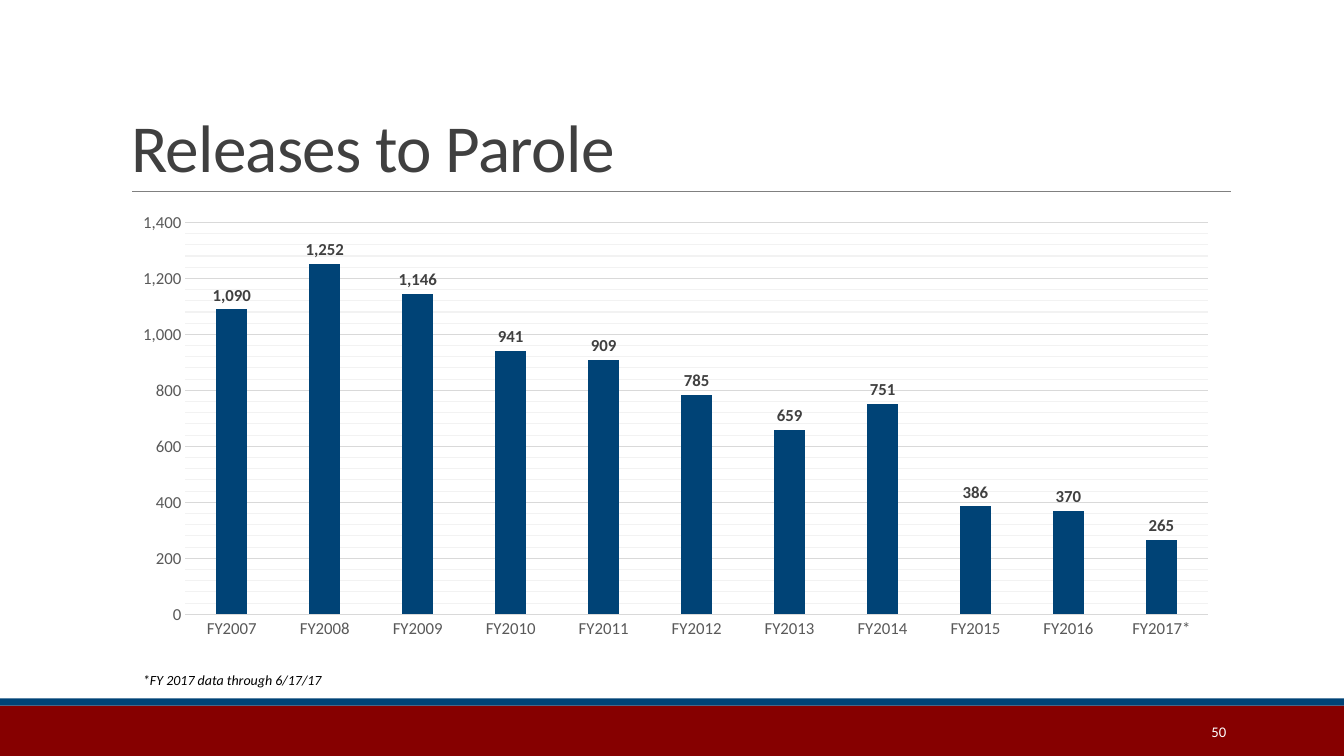
from copy import deepcopy

from pptx import Presentation
from pptx.chart.data import CategoryChartData
from pptx.dml.color import RGBColor
from pptx.enum.chart import XL_CHART_TYPE, XL_LABEL_POSITION, XL_TICK_MARK
from pptx.enum.shapes import MSO_CONNECTOR, MSO_SHAPE
from pptx.enum.text import MSO_ANCHOR, PP_ALIGN
from pptx.oxml.ns import qn
from pptx.util import Inches, Pt
from lxml import etree

COLUMN = XL_CHART_TYPE.COLUMN_CLUSTERED
OUTSIDE = XL_LABEL_POSITION.OUTSIDE_END
NO_TICK = XL_TICK_MARK.NONE
STRAIGHT = MSO_CONNECTOR.STRAIGHT
RECT = MSO_SHAPE.RECTANGLE
BOTTOM, MIDDLE, TOP = MSO_ANCHOR.BOTTOM, MSO_ANCHOR.MIDDLE, MSO_ANCHOR.TOP
LEFT, RIGHT = PP_ALIGN.LEFT, PP_ALIGN.RIGHT

RED = RGBColor(0x86, 0x00, 0x00)
BLUE = RGBColor(0x00, 0x43, 0x76)
DARK = RGBColor(0x40, 0x40, 0x40)
GRAY = RGBColor(0x59, 0x59, 0x59)
RULE = RGBColor(0x80, 0x80, 0x80)
GRID = RGBColor(0xD9, 0xD9, 0xD9)
PALE = RGBColor(0xF2, 0xF2, 0xF2)
BLACK = RGBColor(0, 0, 0)
WHITE = RGBColor(255, 255, 255)
FONT = "Calibri"
COUNTS = [1090, 1252, 1146, 941, 909, 785, 659, 751, 386, 370, 265]
YEARS = [f"FY{year}" for year in range(2007, 2017)] + ["FY2017*"]


def set_font(font, size, color, bold=False, italic=False):
    font.name = FONT
    font.size = Pt(size)
    font.color.rgb = color
    font.bold = bold
    font.italic = italic


def set_line(line, color, width=0.75):
    line.color.rgb = color
    line.width = Pt(width)


def add_band(slide, top, height, color):
    band = slide.shapes.add_shape(RECT, 0, Inches(top), Inches(13.33), Inches(height))
    band.shadow.inherit = False
    band.fill.solid()
    band.fill.fore_color.rgb = color
    band.line.fill.background()


def add_rule(slide, left, right, top):
    rule = slide.shapes.add_connector(
        STRAIGHT, Inches(left), Inches(top), Inches(right), Inches(top))
    set_line(rule.line, RULE, 0.5)
    etree.SubElement(rule._element.spPr, qn("a:effectLst"))


def set_title(slide, text):
    title = slide.shapes.title
    title.left, title.top = Inches(1.2), Inches(0.31)
    title.width, title.height = Inches(11), Inches(1.59)
    title.text = text
    title.text_frame.vertical_anchor = BOTTOM
    para = title.text_frame.paragraphs[0]
    para.alignment = LEFT
    para.line_spacing = 0.85
    set_font(para.font, 48, DARK)
    para.runs[0]._r.get_or_add_rPr().set("spc", "-50")


def add_text(slide, box, text, size, color, align=LEFT, anchor=TOP, italic=False):
    frame = slide.shapes.add_textbox(*map(Inches, box)).text_frame
    frame.word_wrap = True
    frame.vertical_anchor = anchor
    frame.text = text
    para = frame.paragraphs[0]
    para.alignment = align
    set_font(para.font, size, color, italic=italic)


def set_axis(axis):
    axis.major_tick_mark = NO_TICK
    axis.minor_tick_mark = NO_TICK
    set_font(axis.tick_labels.font, 12, GRAY)


def set_grid(axis):
    axis.has_major_gridlines = axis.has_minor_gridlines = True
    line = axis.major_gridlines.format.line
    set_line(line, PALE)
    major = axis._element.find(qn("c:majorGridlines"))
    minor = axis._element.find(qn("c:minorGridlines"))
    minor.append(deepcopy(major.find(qn("c:spPr"))))
    set_line(line, GRID)


def add_chart(slide):
    data = CategoryChartData(number_format="#,##0")
    data.categories = YEARS
    data.add_series("Series 1", COUNTS)
    box = map(Inches, (1.2, 2.02, 11, 4.4))
    chart = slide.shapes.add_chart(COLUMN, *box, data).chart
    set_font(chart.font, 10, BLACK)
    chart.has_legend = False
    chart.has_title = False

    set_axis(chart.category_axis)
    set_line(chart.category_axis.format.line, GRID)
    scale = chart.value_axis
    set_axis(scale)
    scale.minimum_scale, scale.maximum_scale = 0, 1400
    scale.major_unit, scale.minor_unit = 200, 40
    set_grid(scale)
    scale.format.line.fill.background()
    scale.tick_labels.number_format = "#,##0"
    scale.tick_labels.number_format_is_linked = False

    plot = chart.plots[0]
    plot.vary_by_categories = False
    plot.gap_width = 199
    bars = plot.series[0]
    bars.format.fill.solid()
    bars.format.fill.fore_color.rgb = BLUE
    labels = bars.data_labels
    labels.show_value = True
    labels.position = OUTSIDE
    labels.number_format = "#,##0"
    labels.number_format_is_linked = False
    set_font(labels.font, 12, DARK, bold=True)


def main():
    deck = Presentation()
    deck.slide_width, deck.slide_height = Inches(13.33), Inches(7.5)
    slide = deck.slides.add_slide(deck.slide_layouts[5])
    add_band(slide, 7, 0.5, RED)
    add_band(slide, 6.93, 0.07, BLUE)
    add_rule(slide, 1.31, 12.21, 1.9)
    set_title(slide, "Releases to Parole")
    add_chart(slide)
    add_text(slide, (10.83, 7.06, 1.43, 0.4), "50", 10.5, WHITE, RIGHT, MIDDLE)
    add_text(slide, (1.32, 6.61, 3.44, 0.27), "*FY 2017 data through 6/17/17",
             10, BLACK, italic=True)
    deck.save("out.pptx")


if __name__ == "__main__":
    main()
